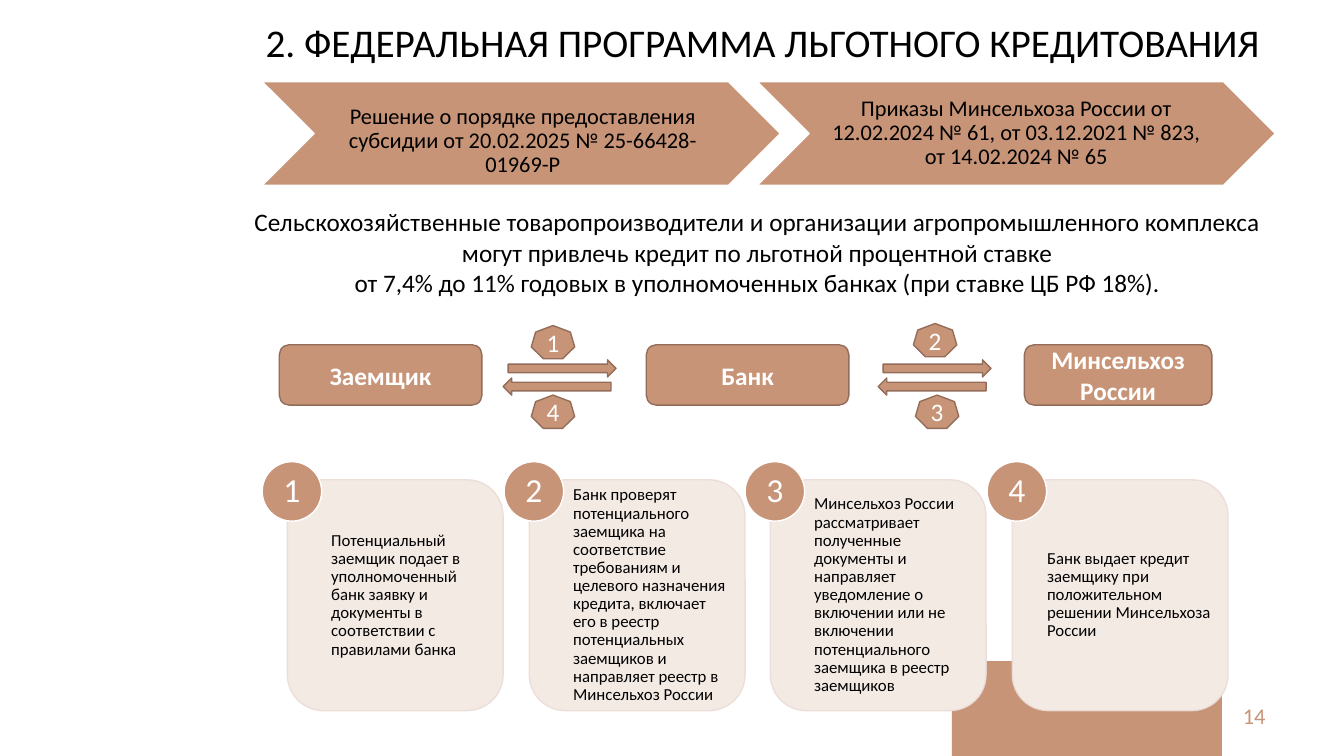
from pptx import Presentation
from pptx.dml.color import RGBColor
from pptx.enum.shapes import MSO_SHAPE as Kind
from pptx.enum.text import MSO_ANCHOR as Anchor, PP_ALIGN as Align
from pptx.oxml.ns import qn
from pptx.util import Pt
from lxml.etree import SubElement

PX = 9144  # EMU in one px, 100 px to the inch
THEME = {
    "font": "Calibri",
    "accent": "C79478", "edge": "936D59", "card": "F4EAE4", "card_edge": "EBDCD6",
    "dark": "000000", "light": "FFFFFF",
    "title": 28, "badge": 24, "body": 18, "note": 16, "step": 12,
}

deck = Presentation()
deck.slide_width, deck.slide_height = 1333 * PX, 750 * PX
slide = deck.slides.add_slide(deck.slide_layouts[6])


def add_figure(kind, box, fill="accent", edge="edge"):
    figure = slide.shapes.add_shape(kind, *(v * PX for v in box))
    figure.shadow.inherit = False
    figure.fill.solid()
    figure.fill.fore_color.rgb = RGBColor.from_string(THEME[fill])
    if edge:
        figure.line.color.rgb = RGBColor.from_string(THEME[edge])
        figure.line.width = Pt(1)
    else:
        figure.line.fill.background()
    return figure


def write(holder, text, size="body", color="dark", bold=False, align=Align.CENTER,
          anchor=Anchor.MIDDLE, insets=(10, 5, 10, 5), spacing=None):
    frame = holder.text_frame
    frame.word_wrap = True
    frame.vertical_anchor = anchor
    (frame.margin_left, frame.margin_top,
     frame.margin_right, frame.margin_bottom) = (v * PX for v in insets)
    frame.text = text
    for paragraph in frame.paragraphs:
        paragraph.alignment = align
        paragraph.line_spacing = spacing
        for run in paragraph.runs:
            run.font.name = THEME["font"]
            run.font.size = Pt(THEME[size])
            run.font.bold = bold
            run.font.color.rgb = RGBColor.from_string(THEME[color])


# Corner block, page number, title and summary
add_figure(Kind.RECTANGLE, (944, 656, 268, 94), edge=None)
labels = [
    ((965, 690, 300, 40), "14",
     dict(size="note", color="accent", align=Align.RIGHT)),
    ((242, 13, 1028, 57), "2. ФЕДЕРАЛЬНАЯ ПРОГРАММА ЛЬГОТНОГО КРЕДИТОВАНИЯ",
     dict(size="title", anchor=Anchor.TOP)),
    ((237, 200, 1028, 101),
     "Сельскохозяйственные товаропроизводители и организации агропромышленного "
     "комплекса могут привлечь кредит по льготной процентной ставке\n"
     "от 7,4% до 11% годовых в уполномоченных банках (при ставке ЦБ РФ 18%).",
     dict(anchor=Anchor.TOP)),
]
for box, text, style in labels:
    write(slide.shapes.add_textbox(*(v * PX for v in box)), text, **style)

# Chevrons with the legal basis
legal_acts = [
    (260, "Решение о порядке предоставления субсидии от 20.02.2025 № 25-66428-01969-Р",
     (4, 17, 1, 1)),
    (751, "Приказы Минсельхоза России от 12.02.2024 № 61, от 03.12.2021 № 823, "
     "от 14.02.2024 № 65", (18, 2, 18, 2)),
]
for left, text, insets in legal_acts:
    chevron = add_figure(Kind.CHEVRON, (left, 81, 514, 103), edge="light")
    write(chevron, text, size="note", insets=insets, spacing=0.9)

# Parties to the loan
for left, width, party in [(277, 201, "Заемщик"), (641, 201, "Банк"),
                           (1016, 186, "Минсельхоз России")]:
    write(add_figure(Kind.ROUNDED_RECTANGLE, (left, 342, width, 60)), party,
          color="light", bold=True)

# Exchange arrows between the parties
for left in (504, 876):
    add_figure(Kind.RIGHT_ARROW, (left, 357, 107, 17))
    add_figure(Kind.RIGHT_ARROW, (left - 5, 375, 107, 17)).rotation = 180

# Step numbers beside the arrows
for number, (left, top) in enumerate([(527, 323), (906, 321), (908, 392), (527, 392)], 1):
    write(add_figure(Kind.HEPTAGON, (left, top, 43, 33)), str(number), color="light")

# Step cards
steps = [
    "Потенциальный заемщик подает в уполномоченный банк заявку и документы "
    "в соответствии с правилами банка",
    "Банк проверят потенциального заемщика на соответствие требованиям и целевого "
    "назначения кредита, включает его в реестр потенциальных заемщиков и направляет "
    "реестр в Минсельхоз России",
    "Минсельхоз России рассматривает полученные документы и направляет уведомление "
    "о включении или не включении потенциального заемщика в реестр заемщиков",
    "Банк выдает кредит заемщику при положительном решении Минсельхоза России",
]
offsets = [round(719 * i / 3) for i in range(len(steps))]
for offset, step in zip(offsets, steps):
    card = add_figure(Kind.ROUNDED_RECTANGLE, (285 + offset, 476, 214, 229),
                      fill="card", edge="card_edge")
    edge_color = card.line._get_or_add_ln().find(".//" + qn("a:srgbClr"))
    SubElement(edge_color, qn("a:alpha"), val="90000")
    insets = (24, 0, 0, 0) if step == steps[-1] else (33, 8, 8, 8)
    write(card, step, size="step", align=Align.LEFT, insets=insets, spacing=0.9)

# Step badges on the card corners
for number, offset in enumerate(offsets, 1):
    badge = add_figure(Kind.OVAL, (260 + offset, 458, 59, 59), edge="light")
    write(badge, str(number), size="badge", color="light", insets=(0, 0, 0, 0), spacing=0.9)

deck.save("out.pptx")
